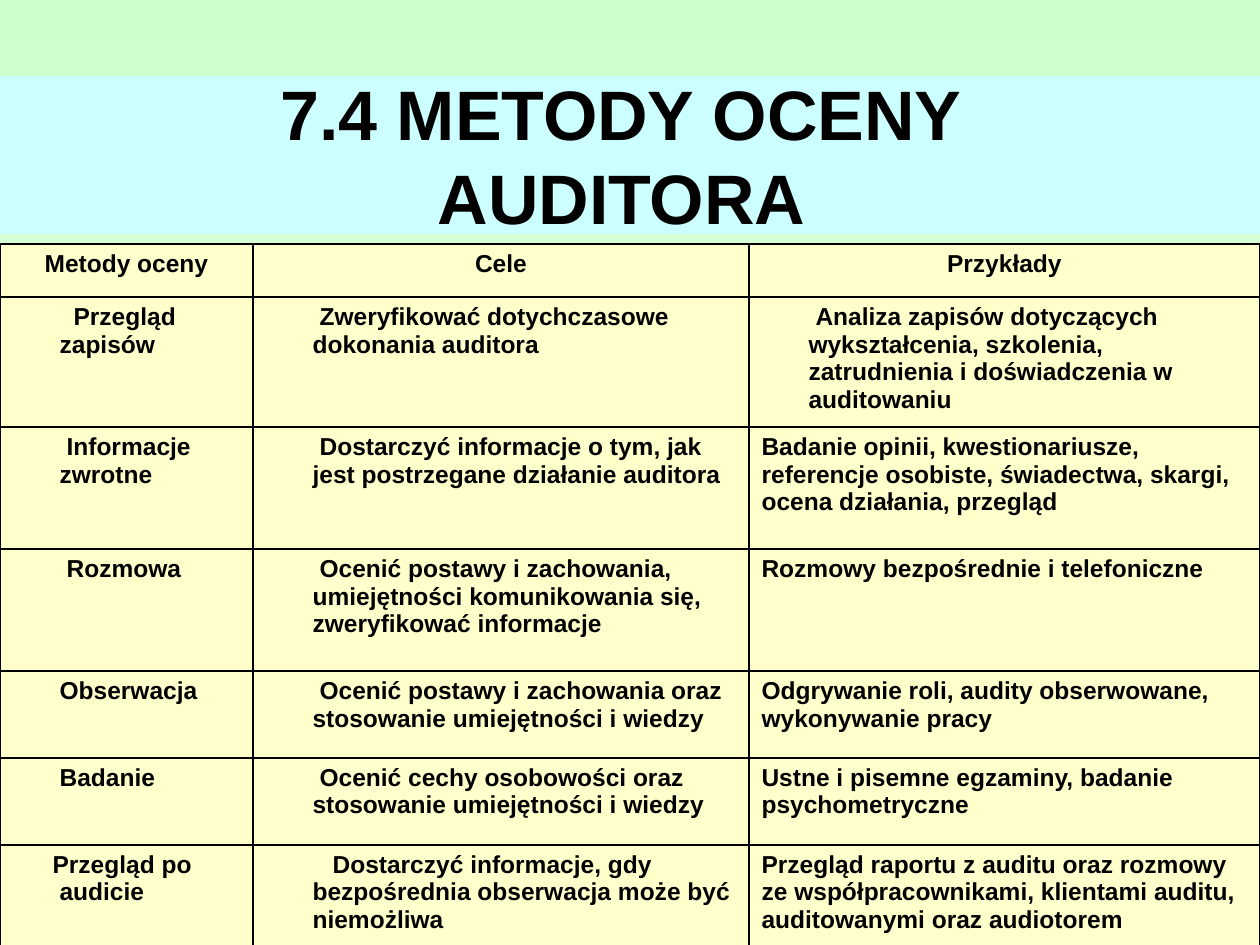
from lxml.etree import SubElement
from pptx import Presentation
from pptx.dml.color import RGBColor
from pptx.enum.text import MSO_ANCHOR, MSO_AUTO_SIZE, PP_ALIGN
from pptx.oxml.ns import qn
from pptx.util import Pt

PX = 914400 // 126
COLORS = {
    "text": "000000",
    "border": "000000",
    "cell": "FFFFCC",
    "title": "CCFFFF",
    "sky_top": "CCFFCC",
    "sky_bottom": "FAFFFA",
}
COLUMN_WIDTHS = [253, 496, 511]
ROW_HEIGHTS = [53, 130, 122, 122, 87, 87, 101]
HANGING_MARGIN = 47

HEADERS = ["Metody oceny", "Cele", "Przykłady"]
# Each cell: text and first-line indent in px; None means no left margin
METHODS = [
    [("Przegląd zapisów", 14),
     ("Zweryfikować dotychczasowe dokonania auditora", 7),
     ("Analiza zapisów dotyczących wykształcenia, szkolenia, "
      "zatrudnienia i doświadczenia w auditowaniu", 7)],
    [("Informacje zwrotne", 7),
     ("Dostarczyć informacje o tym, jak jest postrzegane działanie auditora", 7),
     ("Badanie opinii, kwestionariusze, referencje osobiste, świadectwa, "
      "skargi, ocena działania, przegląd", None)],
    [("Rozmowa", 7),
     ("Ocenić postawy i zachowania, umiejętności komunikowania się, "
      "zweryfikować informacje", 7),
     ("Rozmowy bezpośrednie i telefoniczne", None)],
    [("Obserwacja", 0),
     ("Ocenić postawy i zachowania oraz stosowanie umiejętności i wiedzy", 7),
     ("Odgrywanie roli, audity obserwowane, wykonywanie pracy", None)],
    [("Badanie", 0),
     ("Ocenić cechy osobowości oraz stosowanie umiejętności i wiedzy", 7),
     ("Ustne i pisemne egzaminy, badanie psychometryczne", None)],
    [("Przegląd po audicie", -7),
     ("Dostarczyć informacje, gdy bezpośrednia obserwacja może być niemożliwa", 20),
     ("Przegląd raportu z auditu oraz rozmowy ze współpracownikami, "
      "klientami auditu, auditowanymi oraz audiotorem", None)],
]


def add_bold_run(paragraph, text, size):
    run = paragraph.add_run()
    run.text = text
    run.font.name = "Arial"
    run.font.size = Pt(size)
    run.font.bold = True
    run.font.color.rgb = RGBColor.from_string(COLORS["text"])


def add_borders(cell):
    properties = cell._tc.get_or_add_tcPr()
    for side in ("a:lnL", "a:lnR", "a:lnT", "a:lnB"):
        line = SubElement(properties, qn(side), w=str(Pt(1)))
        fill = SubElement(line, qn("a:solidFill"))
        SubElement(fill, qn("a:srgbClr"), val=COLORS["border"])


prs = Presentation()
prs.slide_width = 1260 * PX
prs.slide_height = 945 * PX
slide = prs.slides.add_slide(prs.slide_layouts[5])

background = slide.background.fill
background.gradient()
background.gradient_angle = 270
for stop, name in zip(background.gradient_stops, ("sky_top", "sky_bottom")):
    stop.color.rgb = RGBColor.from_string(COLORS[name])

title = slide.shapes.title
title.left, title.top, title.width, title.height = 0, 76 * PX, 1260 * PX, 158 * PX
title.fill.solid()
title.fill.fore_color.rgb = RGBColor.from_string(COLORS["title"])
title.text_frame.auto_size = MSO_AUTO_SIZE.NONE
title.text_frame.vertical_anchor = MSO_ANCHOR.MIDDLE
heading = title.text_frame.paragraphs[0]
heading.alignment = PP_ALIGN.CENTER
add_bold_run(heading, "7.4 METODY OCENY ", 40)
heading.add_line_break()
add_bold_run(heading, "AUDITORA ", 40)

rows = [[(header, None) for header in HEADERS]] + METHODS
table = slide.shapes.add_table(
    len(rows), len(HEADERS), 0, 244 * PX, sum(COLUMN_WIDTHS) * PX, sum(ROW_HEIGHTS) * PX
).table
for column, width in zip(table.columns, COLUMN_WIDTHS):
    column.width = width * PX
for row, height in zip(table.rows, ROW_HEIGHTS):
    row.height = height * PX

for row_index, row_content in enumerate(rows):
    for column_index, (text, indent) in enumerate(row_content):
        cell = table.cell(row_index, column_index)
        add_borders(cell)
        cell.fill.solid()
        cell.fill.fore_color.rgb = RGBColor.from_string(COLORS["cell"])
        paragraph = cell.text_frame.paragraphs[0]
        paragraph.alignment = PP_ALIGN.CENTER if row_index == 0 else PP_ALIGN.LEFT
        add_bold_run(paragraph, text, 14)
        if indent is not None:
            margins = paragraph._p.get_or_add_pPr()
            margins.set("marL", str(HANGING_MARGIN * PX))
            margins.set("indent", str(indent * PX))

prs.save("out.pptx")
